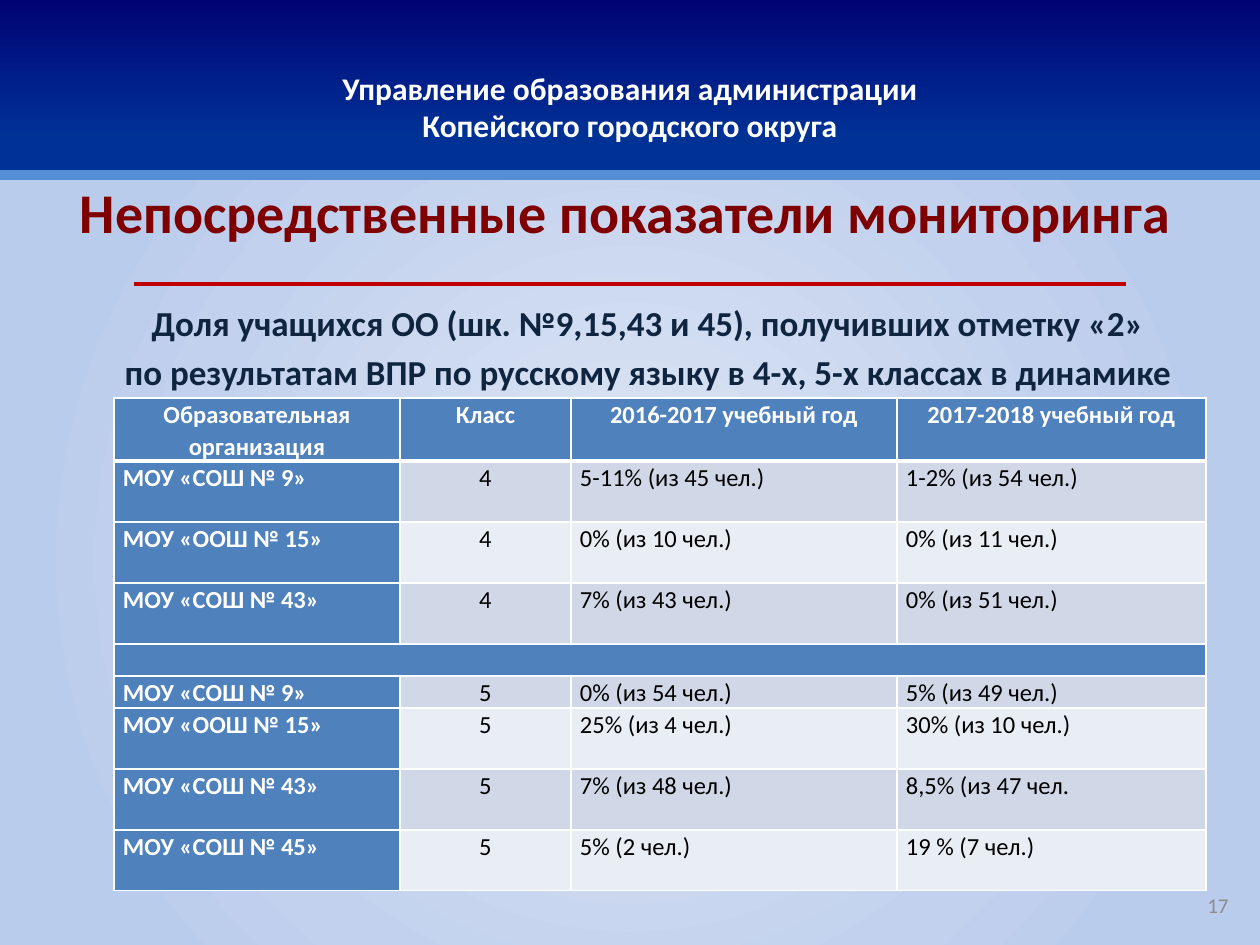
from lxml import etree
from pptx import Presentation
from pptx.dml.color import RGBColor
from pptx.enum.shapes import MSO_CONNECTOR, MSO_SHAPE
from pptx.enum.text import MSO_ANCHOR, PP_ALIGN
from pptx.oxml.ns import qn
from pptx.util import Emu, Pt

RECTANGLE = MSO_SHAPE.RECTANGLE
STRAIGHT = MSO_CONNECTOR.STRAIGHT
TOP, MIDDLE = MSO_ANCHOR.TOP, MSO_ANCHOR.MIDDLE
LEFT, CENTER, RIGHT = PP_ALIGN.LEFT, PP_ALIGN.CENTER, PP_ALIGN.RIGHT

PX = 914400 / 126
FONT = "Calibri"
TITLE_ONLY = 5
COLORS = {
    "white": "FFFFFF", "black": "000000", "title": "7E0000", "subtitle": "0F243E",
    "number": "8C8C8C", "rule": "C00000", "edge": "558ED5", "header": "4F81BD",
    "odd": "D0D8E8", "even": "E9EDF4",
}


def px(*lengths):
    return [Emu(round(length * PX)) for length in lengths]


def write(frame, lines, size, color, bold, align, anchor=TOP):
    frame.word_wrap = True
    frame.vertical_anchor = anchor
    frame.text = "\n".join(lines)
    for para in frame.paragraphs:
        para.alignment = align
        for span in para.runs:
            span.font.name = FONT
            span.font.size = Pt(size)
            span.font.bold = bold
            span.font.color.rgb = RGBColor.from_string(COLORS[color])


deck = Presentation()
deck.slide_width, deck.slide_height = px(1260, 945)
page = deck.slides.add_slide(deck.slide_layouts[TITLE_ONLY])

bands = []
for top, height, stops, radial in [
    (0, 175, [(0, "000374"), (79, "003296"), (100, "003296")], False),
    (175, 770, [(0, "E1E8F5"), (62, "C2D1ED"), (83, "BACCEC"), (100, "BACCEC")], True),
]:
    band = page.shapes.add_shape(RECTANGLE, *px(0, top, 1260, height))
    band.shadow.inherit = False
    band.line.fill.background()
    band.fill.gradient()
    gradient = band._element.spPr.find(qn("a:gradFill"))
    for child in list(gradient):
        gradient.remove(child)
    stop_list = etree.SubElement(gradient, qn("a:gsLst"))
    for position, color in stops:
        stop = etree.SubElement(stop_list, qn("a:gs"), pos=str(position * 1000))
        etree.SubElement(stop, qn("a:srgbClr"), val=color)
    if radial:
        shade = etree.SubElement(gradient, qn("a:path"), path="circle")
        etree.SubElement(shade, qn("a:fillToRect"), l="50000", t="50000", r="50000", b="50000")
    else:
        etree.SubElement(gradient, qn("a:lin"), ang="5400000", scaled="0")
    bands.append(band)

header = bands[0].text_frame
header.margin_top = px(44)[0]
write(header, ["Управление образования администрации\vКопейского городского округа"],
      18, "white", True, CENTER, MIDDLE)

for start, end, y, color, width in [(0, 1260, 175, "edge", 6), (134, 1126, 284, "rule", 2.25)]:
    line = page.shapes.add_connector(STRAIGHT, *px(start, y, end, y))
    line.line.color.rgb = RGBColor.from_string(COLORS[color])
    line.line.width = Pt(width)
    etree.SubElement(line._element.spPr, qn("a:effectLst"))

title = page.shapes.title
title.left, title.top, title.width, title.height = px(25, 156, 1201, 110)
write(title.text_frame, ["Непосредственные показатели мониторинга"], 32, "title", True, CENTER, MIDDLE)
title._element.getparent().append(title._element)

subtitle = page.shapes.add_textbox(*px(44, 294, 1216, 595)).text_frame
subtitle.margin_top, subtitle.margin_right = px(8, 20)
write(subtitle, [
    "Доля учащихся ОО (шк. №9,15,43 и 45), получивших отметку «2»",
    "по результатам ВПР по русскому языку в 4-х, 5-х классах в динамике",
], 20, "subtitle", True, CENTER)
subtitle.paragraphs[1].space_before = Pt(4)

rows = [
    ["Образовательная организация", "Класс", "2016-2017 учебный год", "2017-2018 учебный год"],
    ["МОУ «СОШ № 9»", "4", "5-11% (из 45 чел.)", "1-2% (из 54 чел.)"],
    ["МОУ «ООШ № 15»", "4", "0% (из 10 чел.)", "0% (из 11 чел.)"],
    ["МОУ «СОШ № 43»", "4", "7% (из 43 чел.)", "0% (из 51 чел.)"],
    ["", "", "", ""],
    ["МОУ «СОШ № 9»", "5", "0% (из 54 чел.)", "5% (из 49 чел.)"],
    ["МОУ «ООШ № 15»", "5", "25% (из 4 чел.)", "30% (из 10 чел.)"],
    ["МОУ «СОШ № 43»", "5", "7% (из 48 чел.)", "8,5% (из 47 чел."],
    ["МОУ «СОШ № 45»", "5", "5% (2 чел.)", "19 % (7 чел.)"],
]
column_widths = [286, 171, 326, 309]
row_heights = [61, 61, 61, 61, 32, 32, 61, 61, 61]
separator = 4

table = page.shapes.add_table(
    len(rows), len(column_widths), *px(114, 398, sum(column_widths), sum(row_heights))
).table
table.first_col = True
for column, width in zip(table.columns, px(*column_widths)):
    column.width = width
for row, height in zip(table.rows, px(*row_heights)):
    row.height = height

for r, texts in enumerate(rows):
    for c, text in enumerate(texts):
        cell = table.cell(r, c)
        heading = r in (0, separator) or c == 0
        cell.margin_left, cell.margin_right, cell.margin_top, cell.margin_bottom = px(9, 9, 0, 0)
        write(cell.text_frame, [text], 14, "white" if heading else "black", heading,
              CENTER if r == 0 or c == 1 else LEFT)
        para = cell.text_frame.paragraphs[0]
        para.line_spacing = 1.07
        if not text:
            para._p.get_or_add_endParaRPr().set("sz", "1400")
        properties = cell._tc.get_or_add_tcPr()
        for side in ("L", "R", "T", "B"):
            thick = (r, side) in [(0, "B"), (1, "T")]
            border = etree.SubElement(properties, qn(f"a:ln{side}"), w=str(Pt(3 if thick else 1)))
            paint = etree.SubElement(border, qn("a:solidFill"))
            etree.SubElement(paint, qn("a:srgbClr"), val=COLORS["white"])
        cell.fill.solid()
        shade = "header" if heading else "odd" if r % 2 else "even"
        cell.fill.fore_color.rgb = RGBColor.from_string(COLORS[shade])
table.cell(separator, 0).merge(table.cell(separator, len(column_widths) - 1))

number = page.shapes.add_textbox(*px(948, 880, 293, 50)).text_frame
write(number, ["17"], 12, "number", False, RIGHT, MIDDLE)

deck.save("out.pptx")
